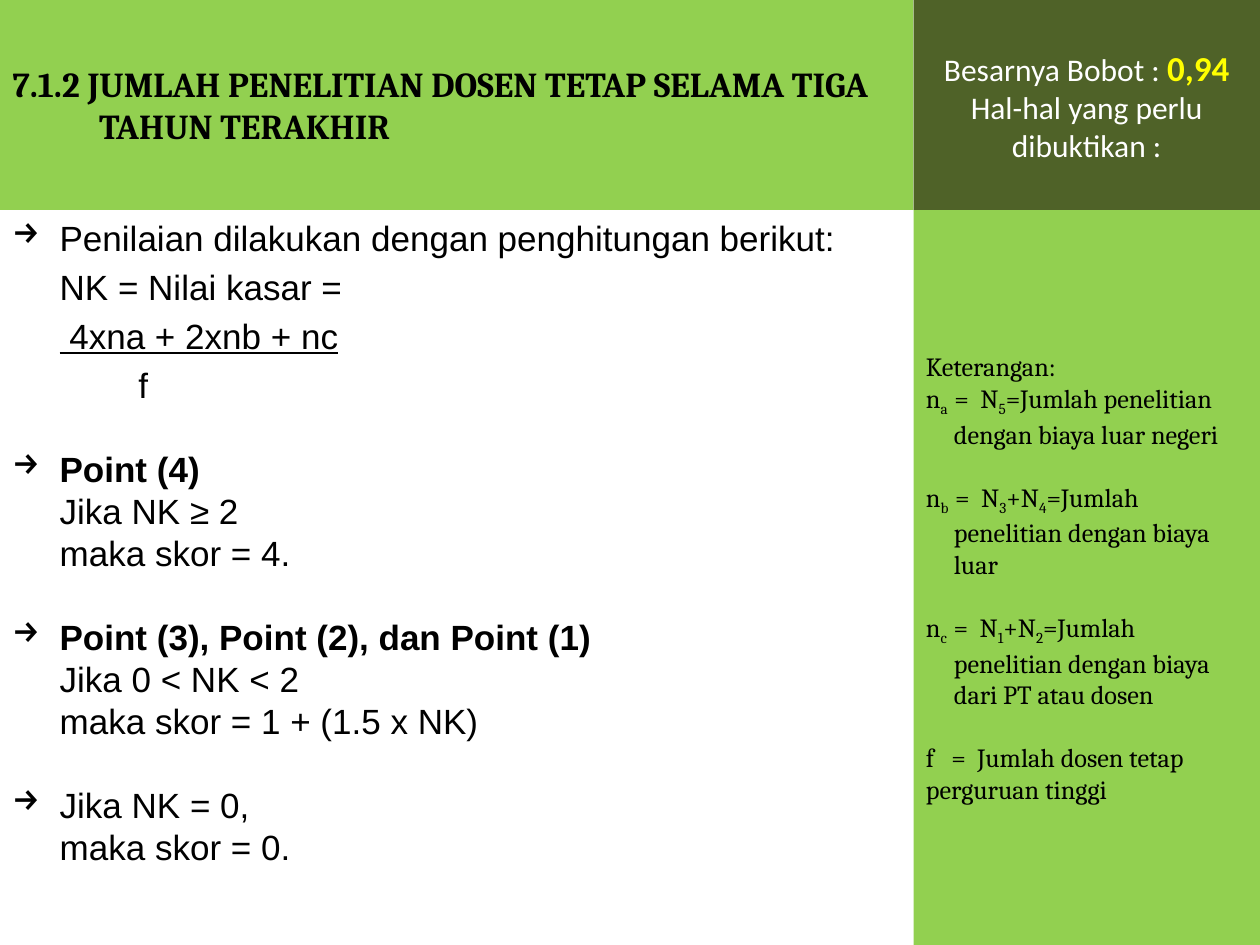
from dataclasses import dataclass
from typing import Any

from lxml import etree
from pptx import Presentation
from pptx.dml.color import RGBColor
from pptx.enum.shapes import MSO_SHAPE
from pptx.enum.text import MSO_ANCHOR, MSO_AUTO_SIZE, PP_ALIGN
from pptx.oxml.ns import qn
from pptx.util import Pt

RECT = MSO_SHAPE.RECTANGLE
MIDDLE, TOP = MSO_ANCHOR.MIDDLE, MSO_ANCHOR.TOP
LEFT, CENTER = PP_ALIGN.LEFT, PP_ALIGN.CENTER
FIXED = MSO_AUTO_SIZE.NONE


@dataclass(frozen=True)
class Theme:
    green: str = "92D050"
    olive: str = "4F6228"
    black: str = "000000"
    white: str = "FFFFFF"
    yellow: str = "FFFF00"
    sans: str = "Arial"
    serif: str = "Cambria"
    label: str = "Calibri"
    large: int = 20
    mid: int = 18
    small: int = 15


def write(para, text, *, font, size, color, bold=False, line=False, sub=False):
    run = para.add_run()
    run.text = text
    style = run.font
    style.name, style.size = font, Pt(size)
    style.bold, style.underline = bold, line
    style.color.rgb = RGBColor.from_string(color)
    if sub:
        run._r.get_or_add_rPr().set("baseline", "-25000")


@dataclass
class Page:
    slide: Any
    theme: Theme

    def place(self, shape, left, top, width, height):
        shape.left, shape.top = Pt(left), Pt(top)
        shape.width, shape.height = Pt(width), Pt(height)

    def frame(self, shape, anchor):
        frame = shape.text_frame
        frame.word_wrap, frame.auto_size = True, FIXED
        frame.vertical_anchor = anchor
        return frame

    def paint(self, shape, color):
        shape.fill.solid()
        shape.fill.fore_color.rgb = RGBColor.from_string(color)
        shape.line.fill.background()

    def title(self, *box, fill):
        shape = self.slide.shapes.title
        self.place(shape, *box)
        self.paint(shape, fill)
        return self.frame(shape, MIDDLE)

    def panel(self, *box, fill):
        shape = self.slide.shapes.add_shape(RECT, *map(Pt, box))
        shape.shadow.inherit = False
        self.paint(shape, fill)
        return self.frame(shape, MIDDLE)

    def text(self, *box):
        return self.frame(self.slide.shapes.add_textbox(*map(Pt, box)), TOP)

    def para(self, frame, margin=0, hang=0, before=0, pitch=None, align=LEFT, mark=None):
        first = frame.paragraphs[0]
        para = frame.add_paragraph() if first.runs else first
        para.alignment, para.space_before = align, Pt(before)
        if pitch:
            para.line_spacing = Pt(pitch)
        props = para._p.get_or_add_pPr()
        props.set("marL", str(Pt(margin)))
        props.set("indent", str(-Pt(hang)))
        if mark:
            etree.SubElement(props, qn("a:buChar")).set("char", mark)
        return para


theme = Theme()
deck = Presentation()
deck.slide_width, deck.slide_height = Pt(720), Pt(540)
page = Page(deck.slides.add_slide(deck.slide_layouts[5]), theme)

split, head = 522, 120
side, rest = 720 - split, 540 - head

body = page.text(0, head, 534, rest)
inset, pitch = 27, 24
steps = [
    ("Penilaian dilakukan dengan penghitungan berikut:", dict(mark="→"), {}),
    ("NK = Nilai kasar =", dict(before=4), {}),
    (" 4xna + 2xnb + nc", dict(before=4), dict(line=True)),
    ("f", dict(before=4, margin=72), {}),
    ("Point (4)", dict(before=pitch, mark="→"), dict(bold=True)),
    ("Jika NK ≥ 2", {}, {}),
    ("maka skor = 4.", {}, {}),
    ("Point (3), Point (2), dan Point (1)", dict(before=pitch, mark="→"), dict(bold=True)),
    ("Jika 0 < NK < 2", {}, {}),
    ("maka skor = 1 + (1.5 x NK)", {}, {}),
    ("Jika NK = 0,", dict(before=pitch, mark="→"), {}),
    ("maka skor = 0.", {}, {}),
]
for words, form, style in steps:
    hang = inset if "mark" in form else 0
    para = page.para(body, **{"margin": inset, "hang": hang, "pitch": pitch, **form})
    write(para, words, font=theme.sans, size=theme.large, color=theme.black, **style)

title = page.title(0, 0, split, head, fill=theme.green)
write(page.para(title, margin=49.5, hang=49.5),
      "7.1.2 JUMLAH PENELITIAN DOSEN TETAP SELAMA TIGA TAHUN TERAKHIR",
      font=theme.serif, size=theme.large, color=theme.black, bold=True)

notes = page.panel(split, head, side, rest, fill=theme.green)
terms = [
    ("Keterangan:", 0, 0),
    ("n|a  |=  N|5|=Jumlah penelitian dengan biaya luar negeri", 16, 0),
    ("n|b  |=  N|3|+N|4|=Jumlah penelitian dengan biaya luar", 16, 18),
    ("n|c  |=  N|1|+N|2|=Jumlah penelitian dengan biaya dari PT atau dosen", 16, 18),
    ("f   =  Jumlah dosen tetap perguruan tinggi", 0, 18),
]
for words, hang, gap in terms:
    para = page.para(notes, margin=hang, hang=hang, before=gap)
    for spot, part in enumerate(words.split("|")):
        write(para, part, font=theme.serif, size=theme.small, color=theme.black,
              sub=spot % 2 == 1)

weight = page.panel(split, 0, side, head, fill=theme.olive)
plain = dict(font=theme.label, size=theme.mid, color=theme.white)
para = page.para(weight, align=CENTER)
write(para, "Besarnya Bobot : ", **plain)
write(para, "0,94", font=theme.label, size=theme.large, color=theme.yellow, bold=True)
write(page.para(weight, align=CENTER), "Hal-hal yang perlu dibuktikan :", **plain)

deck.save("out.pptx")
